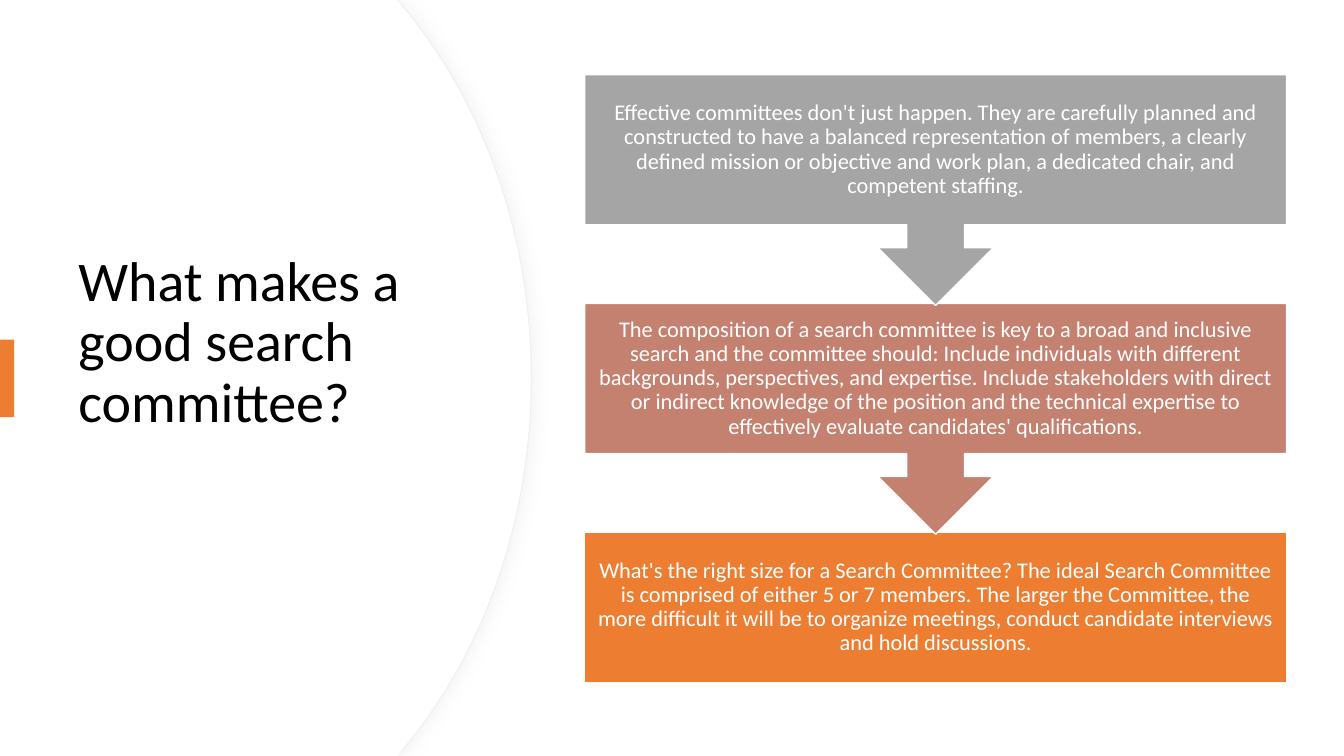
import pptx
import pptx.dml.color
import pptx.enum.shapes
import pptx.enum.text
import pptx.oxml
import pptx.oxml.ns
import pptx.util
from pptx.util import Inches

SHAPE = pptx.enum.shapes.MSO_SHAPE
ALIGN = pptx.enum.text.PP_ALIGN
MIDDLE = pptx.enum.text.MSO_ANCHOR.MIDDLE

TITLE = "What makes a good search committee?"
STEPS = [
    ("A5A5A5", "Effective committees don't just happen. They are carefully planned and "
     "constructed to have a balanced representation of members, a clearly defined mission "
     "or objective and work plan, a dedicated chair, and competent staffing."),
    ("C48170", "The composition of a search committee is key to a broad and inclusive search "
     "and the committee should: Include individuals with different backgrounds, perspectives, "
     "and expertise. Include stakeholders with direct or indirect knowledge of the position "
     "and the technical expertise to effectively evaluate candidates' qualifications."),
    ("ED7D31", "What's the right size for a Search Committee? The ideal Search Committee is "
     "comprised of either 5 or 7 members. The larger the Committee, the more difficult it will "
     "be to organize meetings, conduct candidate interviews and hold discussions."),
]
SHADOW = (
    '<a:outerShdw xmlns:a="http://schemas.openxmlformats.org/drawingml/2006/main" '
    'blurRad="127000" dist="38100" dir="0"><a:srgbClr val="D9D9D9">'
    '<a:alpha val="25000"/></a:srgbClr></a:outerShdw>'
)


def tint(code):
    """Return the colour for a hex string."""
    return pptx.dml.color.RGBColor.from_string(code)


def apply(item, values):
    """Set each attribute of an item from a dict."""
    for name, value in values.items():
        setattr(item, name, value)


def paint(shape, fill, line=None, width=1):
    """Give a shape a flat fill and an optional outline."""
    shape.shadow.inherit = False
    shape.fill.solid()
    shape.fill.fore_color.rgb = tint(fill)
    if line:
        shape.line.color.rgb = tint(line)
        shape.line.width = pptx.util.Pt(width)
    else:
        shape.line.fill.background()


def write(shape, text, size, color, align, inset, base):
    """Write one paragraph, centred vertically between the insets."""
    frame = shape.text_frame
    left, top = map(Inches, inset)
    apply(frame, {"word_wrap": True, "vertical_anchor": MIDDLE,
                  "margin_left": left, "margin_right": left,
                  "margin_top": top, "margin_bottom": Inches(base)})
    para = frame.paragraphs[0]
    apply(para, {"text": text, "alignment": align, "line_spacing": 0.9})
    apply(para.runs[0].font, {"name": "Calibri", "size": pptx.util.Pt(size)})
    para.runs[0].font.color.rgb = tint(color)


def bend(shape, start):
    """Turn three straight segments, counted from start, into one curve."""
    tag = pptx.oxml.ns.qn
    lines = list(shape.element.iter(tag("a:lnTo")))[start:start + 3]
    curve = lines[0].makeelement(tag("a:cubicBezTo"))
    lines[0].addprevious(curve)
    for line in lines:
        curve.append(line[0])
        line.getparent().remove(line)


def panel(slide, left, top, width, height, line=None):
    """Draw a white panel whose right edge bulges outward."""
    upper = [(3.94, 0), (width - 1.26, 0.08), (width - 0.48, 1.02),
             (width, 2.32), (width, height / 2)]
    lower = [(x, height - y) for x, y in reversed(upper[:-1])]
    points = [(Inches(left + x), Inches(top + y))
              for x, y in upper + lower + [(0, height)]]
    build = slide.shapes.build_freeform(Inches(left), Inches(top))
    build.add_line_segments(points, close=True)
    shape = build.convert_to_shape()
    for start in (5, 2):
        bend(shape, start)
    paint(shape, "FFFFFF", line, 0.75)
    if line:
        shape.element.spPr.effectLst.append(pptx.oxml.parse_xml(SHADOW))


def head(slide, left, top, width, height):
    """Place the title and the accent bar at the slide edge."""
    box = slide.shapes.add_textbox(*map(Inches, (left, top, width, height)))
    write(box, TITLE, 40, "000000", ALIGN.LEFT, (0.1, 0.05), 0.72)
    bar = slide.shapes.add_shape(SHAPE.RECTANGLE, *map(Inches, (0, top + 2.1, 0.14, 0.77)))
    paint(bar, "ED7D31")


def flow(slide, left, top, width, body, pitch):
    """Stack the steps, each pointing down to the next."""
    for index, (color, text) in reversed(list(enumerate(STEPS))):
        last = index == len(STEPS) - 1
        kind = SHAPE.RECTANGLE if last else SHAPE.DOWN_ARROW_CALLOUT
        tall = body if last else pitch + 0.02
        box = left, top + index * pitch, width, tall
        shape = slide.shapes.add_shape(kind, *map(Inches, box))
        if not last:
            shape.adjustments[3] = body / tall
        paint(shape, color, "FFFFFF")
        write(shape, text, 16, "FFFFFF", ALIGN.CENTER, (0.12, 0.12), 0.12)


def main():
    """Build the slide and save it."""
    deck = pptx.Presentation()
    apply(deck, {"slide_width": Inches(13.33), "slide_height": Inches(7.5)})
    slide = deck.slides.add_slide(deck.slide_layouts[6])
    panel(slide, 0, 0, 5.27, 7.5, "EFEFEF")
    panel(slide, 0, 0, 5.26, 7.5)
    head(slide, 0.68, 1.27, 3.94, 4.95)
    flow(slide, 5.8, 0.74, 6.96, 1.49, 2.27)
    deck.save("out.pptx")


if __name__ == "__main__":
    main()
